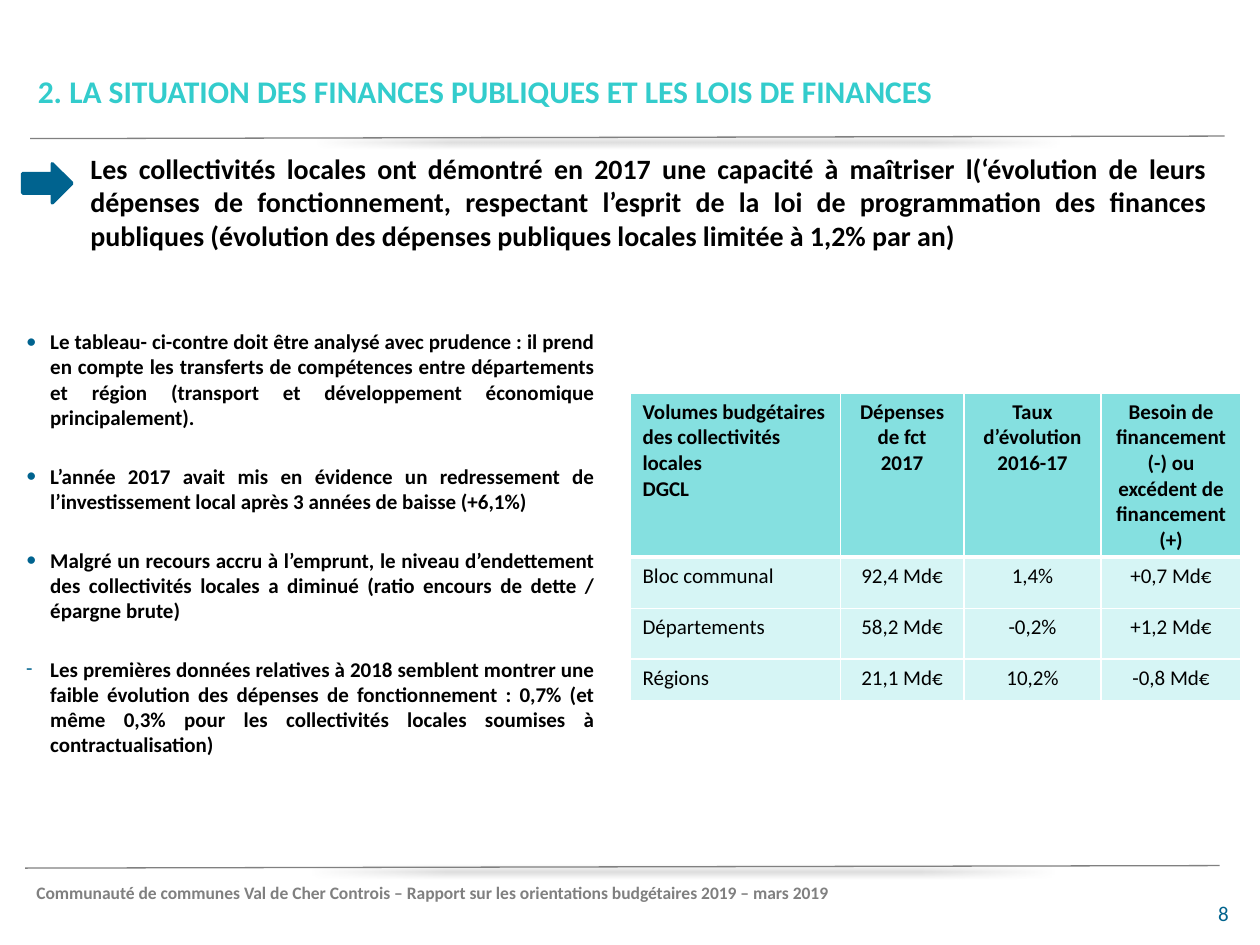
from typing import NamedTuple

from pptx import Presentation
from pptx.dml.color import RGBColor
from pptx.enum.shapes import MSO_CONNECTOR, MSO_SHAPE
from pptx.enum.text import MSO_ANCHOR, MSO_AUTO_SIZE, PP_ALIGN
from pptx.oxml import parse_xml
from pptx.oxml.ns import nsdecls
from pptx.util import Inches, Pt

FONT = "Calibri"
BLACK = RGBColor(0x00, 0x00, 0x00)
GREY = RGBColor(0x80, 0x80, 0x80)
TURQUOISE = RGBColor(0x33, 0xCC, 0xCC)
BLUE = RGBColor(0x00, 0x63, 0x8F)
PAGE_BLUE = RGBColor(0x00, 0x63, 0x8D)
HEADER_FILL = RGBColor(0x85, 0xE0, 0xE0)
ROW_FILL = RGBColor(0xD6, 0xF5, 0xF5)
BORDER = RGBColor(0xFF, 0xFF, 0xFF)


class Box(NamedTuple):
    left: float
    top: float
    width: float
    height: float

    def lengths(self) -> list:
        return [Inches(value) for value in self]


class Style(NamedTuple):
    size: int
    color: RGBColor = BLACK
    bold: bool = True
    align: PP_ALIGN = PP_ALIGN.LEFT


class Bullet(NamedTuple):
    char: str
    text: str


class Rule(NamedTuple):
    left: float
    top: float
    width: float = 9.48
    rise: float = 0.02


RULES = [Rule(0.24, 1.1), Rule(0.2, 6.89)]

BULLETS = [
    Bullet("•", "Le tableau- ci-contre doit être analysé avec prudence : il prend en compte les "
           "transferts de compétences entre départements et région (transport et développement "
           "économique principalement)."),
    Bullet("•", "L’année 2017 avait mis en évidence un redressement de l’investissement local "
           "après 3 années de baisse (+6,1%)"),
    Bullet("•", "Malgré un recours accru à l’emprunt, le niveau d’endettement des collectivités "
           "locales a diminué (ratio encours de dette / épargne brute)"),
    Bullet("-", "Les premières données relatives à 2018 semblent montrer une faible évolution des "
           "dépenses de fonctionnement : 0,7% (et même 0,3% pour les collectivités locales "
           "soumises à contractualisation)"),
]

BUDGET_ROWS = [
    ("Volumes budgétaires des collectivités locales\nDGCL", "Dépenses de fct\n2017",
     "Taux d’évolution 2016-17", "Besoin de financement (-) ou excédent de financement (+)"),
    ("Bloc communal", "92,4 Md€", "1,4%", "+0,7 Md€"),
    ("Départements", "58,2 Md€", "-0,2%", "+1,2 Md€"),
    ("Régions", "21,1 Md€", "10,2%", "-0,8 Md€"),
]
COLUMN_WIDTHS = [1.67, 0.98, 1.09, 1.11]
ROW_HEIGHTS = [1.29, 0.41, 0.4, 0.33]


def format_text(tf, style: Style) -> None:
    for p in tf.paragraphs:
        p.alignment = style.align
        for r in p.runs:
            r.font.name = FONT
            r.font.size = Pt(style.size)
            r.font.bold = style.bold
            r.font.color.rgb = style.color


def add_text(slide, box: Box, text: str, style: Style, anchor=MSO_ANCHOR.TOP):
    tf = slide.shapes.add_textbox(*box.lengths()).text_frame
    tf.word_wrap = True
    tf.vertical_anchor = anchor
    tf.text = text
    format_text(tf, style)
    return tf


def add_rule(slide, rule: Rule) -> None:
    line = slide.shapes.add_connector(
        MSO_CONNECTOR.STRAIGHT, Inches(rule.left), Inches(rule.top),
        Inches(rule.left + rule.width), Inches(rule.top - rule.rise))
    line.line.color.rgb = GREY
    line.line.width = Pt(0.75)
    line._element.spPr.append(parse_xml(
        f'<a:effectLst {nsdecls("a")}>'
        f'<a:outerShdw blurRad="{Pt(4)}" dist="{Pt(3)}" dir="2700000" rotWithShape="0">'
        '<a:srgbClr val="000000"><a:alpha val="40000"/></a:srgbClr>'
        '</a:outerShdw></a:effectLst>'))


def add_bullets(slide, box: Box, bullets: list[Bullet]) -> None:
    tf = add_text(slide, box, "\n".join(b.text for b in bullets),
                  Style(12, align=PP_ALIGN.JUSTIFY))
    for i, (p, bullet) in enumerate(zip(tf.paragraphs, bullets)):
        pPr = p._p.get_or_add_pPr()
        pPr.set("marL", str(Inches(0.19)))
        pPr.set("indent", str(-Inches(0.19)))
        pPr.append(parse_xml(f'<a:buClr {nsdecls("a")}><a:srgbClr val="{BLUE}"/></a:buClr>'))
        pPr.append(parse_xml(f'<a:buFont {nsdecls("a")} typeface="{FONT}"/>'))
        pPr.append(parse_xml(f'<a:buChar {nsdecls("a")} char="{bullet.char}"/>'))
        p.space_before = Pt(19.2 if i else 0)


def set_borders(cell, bottom: float) -> None:
    tcPr = cell._tc.get_or_add_tcPr()
    sides = {"lnL": 1, "lnR": 1, "lnT": 1, "lnB": bottom}
    for i, (side, width) in enumerate(sides.items()):
        tcPr.insert(i, parse_xml(
            f'<a:{side} {nsdecls("a")} w="{Pt(width)}"><a:solidFill>'
            f'<a:srgbClr val="{BORDER}"/></a:solidFill></a:{side}>'))


def add_budget_table(slide, left: float, top: float) -> None:
    box = Box(left, top, sum(COLUMN_WIDTHS), sum(ROW_HEIGHTS))
    table = slide.shapes.add_table(len(BUDGET_ROWS), len(COLUMN_WIDTHS), *box.lengths()).table
    for column, width in zip(table.columns, COLUMN_WIDTHS):
        column.width = Inches(width)
    for r, (texts, height) in enumerate(zip(BUDGET_ROWS, ROW_HEIGHTS)):
        header = r == 0
        table.rows[r].height = Inches(height)
        for c, text in enumerate(texts):
            cell = table.cell(r, c)
            cell.text_frame.text = text
            align = PP_ALIGN.CENTER if c else PP_ALIGN.LEFT
            format_text(cell.text_frame, Style(12, bold=header, align=align))
            cell.fill.solid()
            cell.fill.fore_color.rgb = HEADER_FILL if header else ROW_FILL
            set_borders(cell, 3 if header else 1)


def main() -> None:
    prs = Presentation()
    prs.slide_width, prs.slide_height = Inches(10), Inches(7.5)
    slide = prs.slides.add_slide(prs.slide_layouts[5])

    # Title
    title = slide.shapes.title
    title.left, title.top, title.width, title.height = Box(0.2, 0.52, 7.4, 0.63).lengths()
    tf = title.text_frame
    tf.text = "2. LA SITUATION DES FINANCES PUBLIQUES ET LES LOIS DE FINANCES"
    tf.auto_size = MSO_AUTO_SIZE.NONE
    tf.vertical_anchor = MSO_ANCHOR.TOP
    format_text(tf, Style(18, TURQUOISE))

    # Rules, footer and page number
    for rule in RULES:
        add_rule(slide, rule)
    add_text(slide, Box(0.19, 6.95, 8.82, 0.27),
             "Communauté de communes Val de Cher Controis – Rapport sur les orientations "
             "budgétaires 2019 – mars 2019", Style(10, GREY))
    add_text(slide, Box(7.52, 7.05, 2.33, 0.4), "8",
             Style(12, PAGE_BLUE, False, PP_ALIGN.RIGHT), MSO_ANCHOR.MIDDLE)

    # Key message with its arrow
    add_text(slide, Box(0.62, 1.15, 9.06, 0.95),
             "Les collectivités locales ont démontré en 2017 une capacité à maîtriser l(‘évolution "
             "de leurs dépenses de fonctionnement, respectant l’esprit de la loi de programmation "
             "des finances publiques (évolution des dépenses publiques locales limitée à 1,2% par "
             "an)", Style(16, align=PP_ALIGN.JUSTIFY))
    arrow = slide.shapes.add_shape(MSO_SHAPE.RIGHT_ARROW, *Box(0.18, 1.3, 0.39, 0.31).lengths())
    arrow.shadow.inherit = False
    arrow.fill.solid()
    arrow.fill.fore_color.rgb = BLUE
    arrow.line.color.rgb = BLUE
    arrow.line.width = Pt(2)

    # Analysis and budget table
    add_budget_table(slide, 5, 3.12)
    add_bullets(slide, Box(0.11, 2.56, 4.71, 3.54), BULLETS)

    prs.save("out.pptx")


if __name__ == "__main__":
    main()
